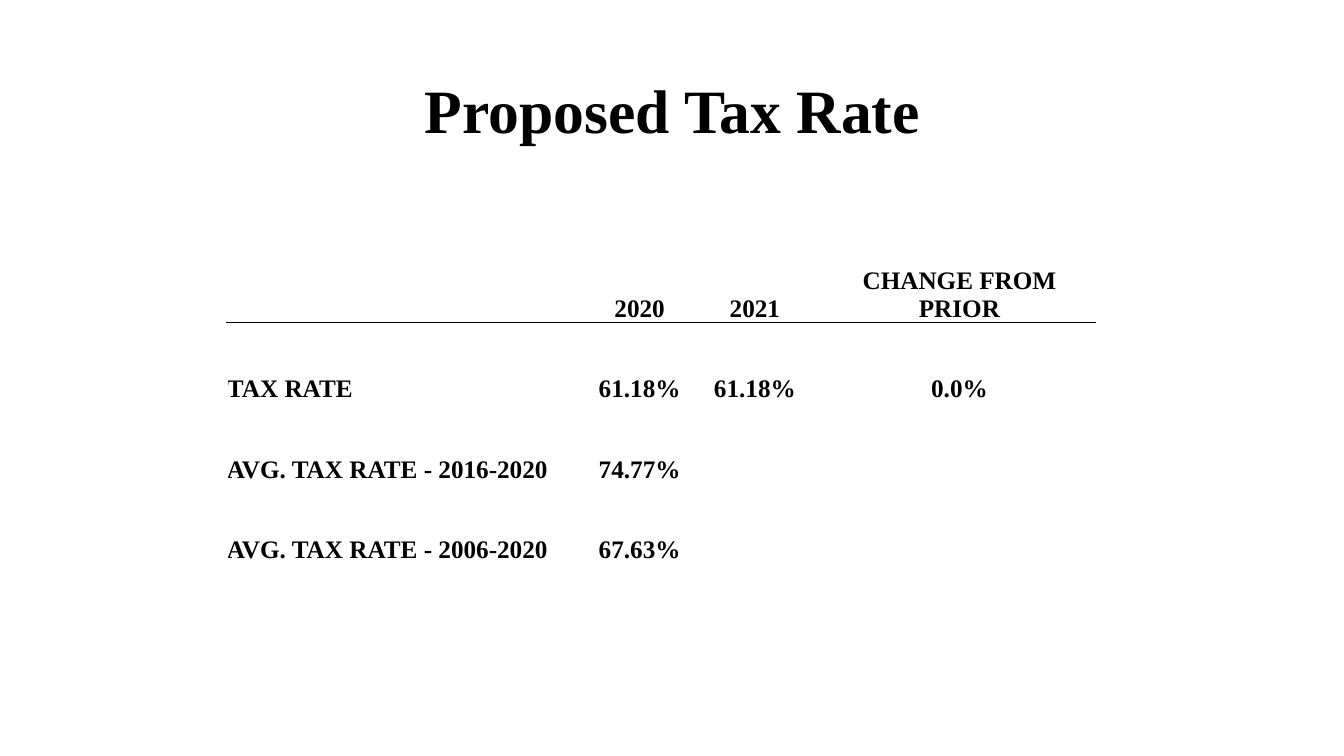
from lxml import etree
from pptx import Presentation
from pptx import util as u
from pptx.dml.color import RGBColor
from pptx.enum import text
from pptx.oxml import ns

COLOURS = {"ink": "000000"}
FONT = "Times New Roman"
COLUMN_WIDTHS = [9.22, 2.36, 3.45, 3.43, 3.43]
ROW_HEIGHT = 2.03
RATES = [
    ["", "2020", "2021", "CHANGE FROM PRIOR", ""],
    ["TAX RATE", "61.18%", "61.18%", "0.0%", ""],
    ["AVG. TAX RATE - 2016-2020", "74.77%", "", "", ""],
    ["AVG. TAX RATE - 2006-2020", "67.63%", "", "", ""],
]


def format_para(para, size, align):
    """Apply the bold serif style to a paragraph and its runs."""
    para.alignment = align
    for font in [para.font] + [span.font for span in para.runs]:
        font.name, font.size, font.bold = FONT, u.Pt(size), True
        font.color.rgb = RGBColor.from_string(COLOURS["ink"])


def add_border(cell, side):
    """Draw a thin rule on one side of a cell."""
    line = etree.Element(ns.qn(f"a:{side}"), w=str(u.Pt(0.5)))
    fill = etree.SubElement(line, ns.qn("a:solidFill"))
    etree.SubElement(fill, ns.qn("a:srgbClr"), val=COLOURS["ink"])
    cell._tc.get_or_add_tcPr().insert(0, line)


def add_title(page, left, top, width, height):
    """Place the slide heading in the given box."""
    title = page.shapes.title
    title.left, title.top, title.width, title.height = map(u.Cm, (left, top, width, height))
    frame = title.text_frame
    frame.text = "Proposed Tax Rate"
    frame.auto_size = text.MSO_AUTO_SIZE.NONE
    frame.vertical_anchor = text.MSO_ANCHOR.MIDDLE
    frame.paragraphs[0].line_spacing = 0.9
    format_para(frame.paragraphs[0], 44, text.PP_ALIGN.CENTER)


def add_rate_table(page, left, top):
    """Build the tax rate table from its top left corner."""
    box = map(u.Cm, (left, top, sum(COLUMN_WIDTHS), ROW_HEIGHT * len(RATES)))
    table = page.shapes.add_table(len(RATES), len(COLUMN_WIDTHS), *box).table
    table.first_row = table.horz_banding = False
    for column, width in zip(table.columns, COLUMN_WIDTHS):
        column.width = u.Cm(width)
    for row, values in enumerate(RATES):
        table.rows[row].height = u.Cm(ROW_HEIGHT)
        for col, value in enumerate(values):
            cell = table.cell(row, col)
            cell.text = value
            cell.fill.background()
            cell.vertical_anchor = text.MSO_ANCHOR.BOTTOM
            cell.margin_left = cell.margin_right = cell.margin_top = cell.margin_bottom = 0
            align = text.PP_ALIGN.CENTER if col else text.PP_ALIGN.LEFT
            format_para(cell.text_frame.paragraphs[0], 18, align)
            if row < 2:
                add_border(cell, "lnT" if row else "lnB")
    for row in range(2):
        table.cell(row, 3).merge(table.cell(row, 4))


def main():
    """Create the deck and save it."""
    deck = Presentation()
    deck.slide_width, deck.slide_height = u.Cm(33.87), u.Cm(19.05)
    page = deck.slides.add_slide(deck.slide_layouts[5])
    add_title(page, 2.34, 1.02, 29.21, 3.68)
    add_rate_table(page, 5.72, 6.1)
    deck.save("out.pptx")


if __name__ == "__main__":
    main()
